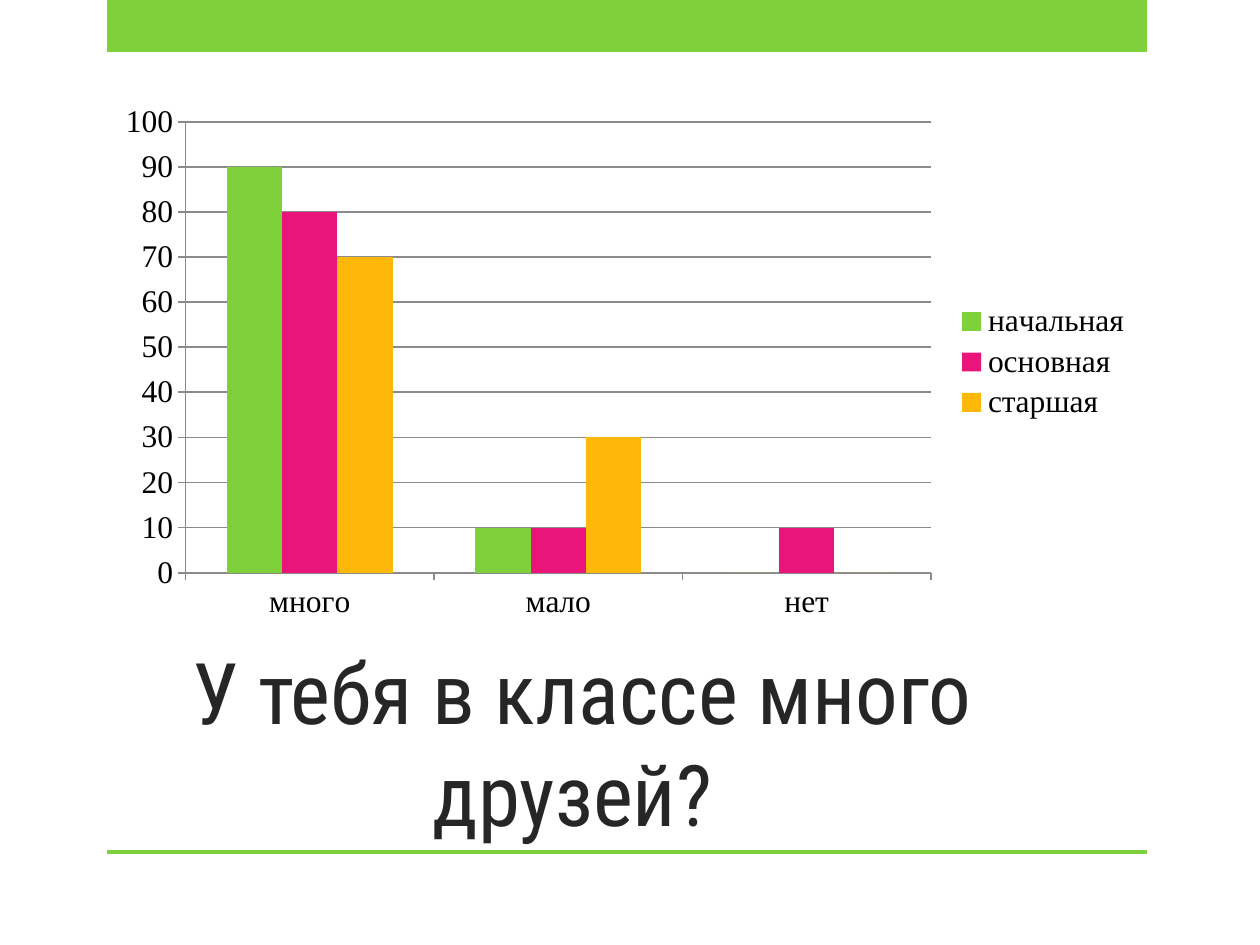
"""Build the slide on friends in class: a clustered column chart above its question."""
from pptx import Presentation
from pptx.chart.data import CategoryChartData
from pptx.dml.color import RGBColor
from pptx.enum.chart import XL_CHART_TYPE, XL_LEGEND_POSITION, XL_TICK_MARK
from pptx.enum.shapes import MSO_SHAPE
from pptx.enum.text import MSO_ANCHOR, MSO_AUTO_SIZE, PP_ALIGN
from pptx.util import Emu, Pt

QUESTION = " У тебя в классе много друзей?"
ANSWERS = ["много", "мало", "нет"]
SCHOOLS = [
    ("начальная", (90, 10, 0), "7FD13B"),
    ("основная", (80, 10, 10), "EA157A"),
    ("старшая", (70, 30, 0), "FEB80A"),
]
GREEN, INK, BLACK, GREY = "7FD13B", "262626", "000000", "8B8B8B"
BANDS = [(107, 0, 1040, 52), (107, 850, 1040, 4)]
QUESTION_BOX = (105, 630, 935, 220)
CHART_BOX = (105, 94, 1040, 536)


def px(length):
    return Emu(round(length * 914400 / 126))


def box(lengths):
    return [px(length) for length in lengths]


def paint(color_format, color):
    color_format.rgb = RGBColor.from_string(color)


def fill(target, color):
    target.fill.solid()
    paint(target.fill.fore_color, color)


def draw_line(line):
    line.width = Pt(1)
    paint(line.color, GREY)


def add_bands(slide):
    for band_box in BANDS:
        band = slide.shapes.add_shape(MSO_SHAPE.RECTANGLE, *box(band_box))
        band.shadow.inherit = False
        fill(band, GREEN)
        band.line.fill.background()


def set_question(slide):
    question = slide.shapes.title
    question.left, question.top, question.width, question.height = box(QUESTION_BOX)
    frame = question.text_frame
    frame.text = QUESTION
    frame.word_wrap = True
    frame.auto_size = MSO_AUTO_SIZE.NONE
    frame.vertical_anchor = MSO_ANCHOR.BOTTOM
    paragraph = frame.paragraphs[0]
    paragraph.alignment = PP_ALIGN.CENTER
    font = paragraph.runs[0].font
    font.name, font.size = "Roboto Condensed", Pt(48.6)
    paint(font.color, INK)


def add_answers_chart(slide):
    answers = CategoryChartData()
    answers.categories = ANSWERS
    for school, percents, _ in SCHOOLS:
        answers.add_series(school, percents)
    chart = slide.shapes.add_chart(
        XL_CHART_TYPE.COLUMN_CLUSTERED, *box(CHART_BOX), answers
    ).chart
    chart.has_title = False
    chart.font.name, chart.font.size = "Times New Roman", Pt(18)
    paint(chart.font.color, BLACK)

    chart.has_legend = True
    chart.legend.position = XL_LEGEND_POSITION.RIGHT
    chart.legend.include_in_layout = False

    percent_axis = chart.value_axis
    percent_axis.minimum_scale, percent_axis.maximum_scale = 0, 100
    percent_axis.major_unit = 10
    percent_axis.has_major_gridlines = True
    draw_line(percent_axis.major_gridlines.format.line)
    for axis in (percent_axis, chart.category_axis):
        axis.major_tick_mark = XL_TICK_MARK.OUTSIDE
        draw_line(axis.format.line)

    columns = chart.plots[0]
    columns.gap_width, columns.overlap = 150, 0
    columns.vary_by_categories = False
    for series, (_, _, color) in zip(columns.series, SCHOOLS):
        fill(series.format, color)


def main():
    deck = Presentation()
    deck.slide_width, deck.slide_height = px(1260), px(945)
    slide = deck.slides.add_slide(deck.slide_layouts[5])
    add_bands(slide)
    set_question(slide)
    add_answers_chart(slide)
    deck.save("out.pptx")


if __name__ == "__main__":
    main()
